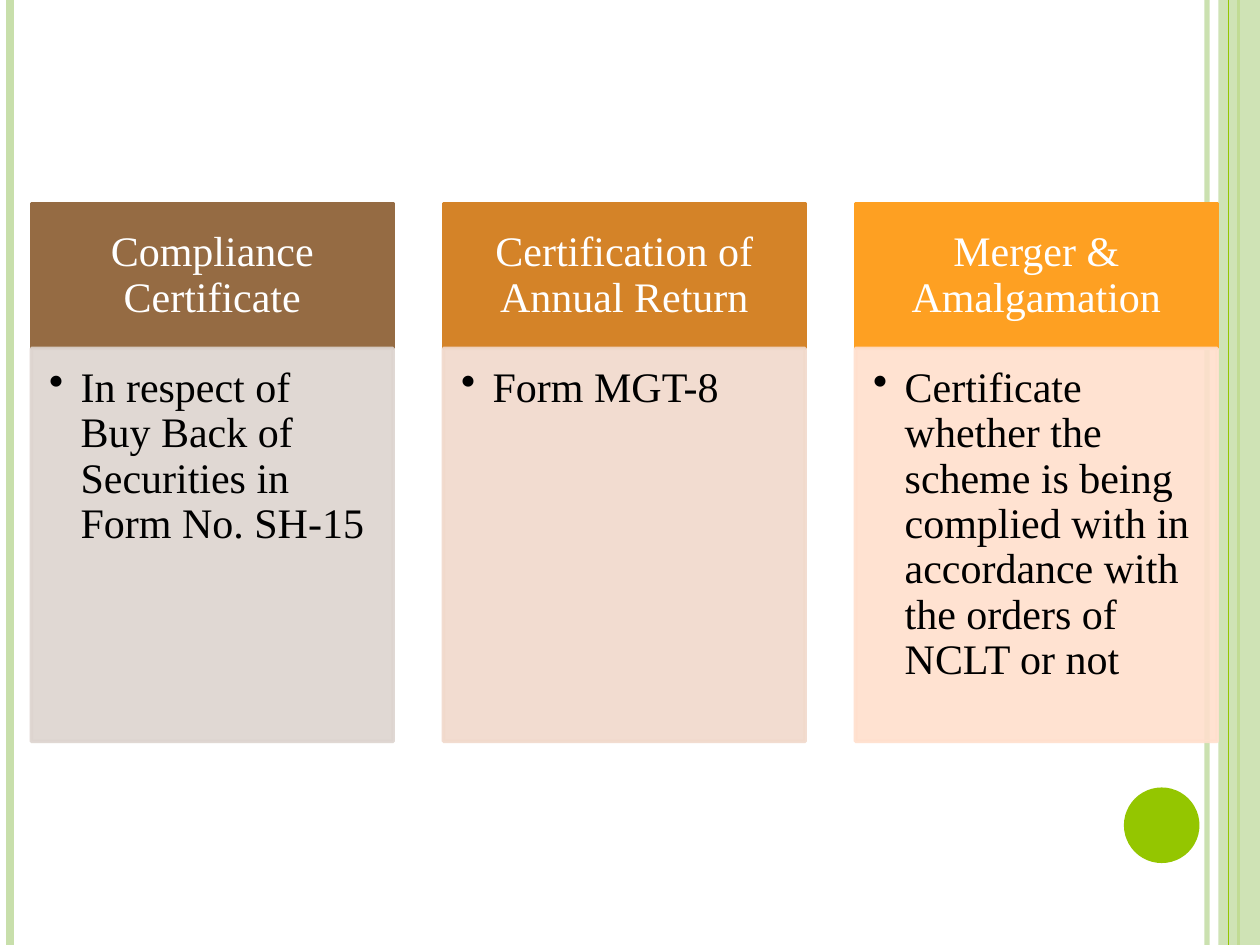
import dataclasses

import pptx
import pptx.dml.color
import pptx.enum.shapes
import pptx.enum.text
import pptx.oxml
import pptx.oxml.ns
import pptx.util

SHAPE = pptx.enum.shapes.MSO_SHAPE
ALIGN = pptx.enum.text.PP_ALIGN
ANCHOR = pptx.enum.text.MSO_ANCHOR


@dataclasses.dataclass(frozen=True)
class Theme:
    font: str = "Times New Roman"
    text_size: int = 24
    border: float = 2
    pale: str = "C8DFAB"
    green: str = "94C600"
    heading_text: str = "FFFFFF"
    body_text: str = "000000"


def apply(target, values):
    for name, value in values.items():
        setattr(target, name, value)


def add_xml(parent, tag, **attributes):
    child = pptx.oxml.parse_xml(f"<{tag} {pptx.oxml.ns.nsdecls('a')}/>")
    for name, value in attributes.items():
        child.set(name, str(value))
    parent.append(child)


class Page:
    COLUMNS, ROWS = 100, 75

    def __init__(self, deck, theme):
        self.theme = theme
        self.column = deck.slide_width / self.COLUMNS
        self.row = deck.slide_height / self.ROWS
        self.slide = deck.slides.add_slide(deck.slide_layouts[6])

    def across(self, columns):
        return pptx.util.Emu(round(columns * self.column))

    def down(self, rows):
        return pptx.util.Emu(round(rows * self.row))

    def paint(self, fill, color, opacity):
        fill.solid()
        fill.fore_color.rgb = pptx.dml.color.RGBColor.from_string(color)
        if opacity < 100:
            solid = fill._xPr.find(pptx.oxml.ns.qn("a:solidFill"))
            add_xml(solid[0], "a:alpha", val=opacity * 1000)

    def rule(self, column, color, width, opacity=100):
        x = self.across(column)
        line = self.slide.shapes.add_connector(
            pptx.enum.shapes.MSO_CONNECTOR.STRAIGHT, x, 0, x, self.down(self.ROWS))
        self.paint(line.line.fill, color, opacity)
        line.line.width = pptx.util.Pt(width)
        add_xml(line._element.spPr, "a:effectLst")

    def block(self, kind, box, color, opacity=100, border=0):
        left, top, width, height = box
        block = self.slide.shapes.add_shape(
            kind, self.across(left), self.down(top), self.across(width), self.down(height))
        block.shadow.inherit = False
        self.paint(block.fill, color, opacity)
        if border:
            self.paint(block.line.fill, color, opacity)
            block.line.width = pptx.util.Pt(border)
        else:
            block.line.fill.background()
        return block

    def label(self, block, text, color, align, anchor, insets, bullet=False):
        left, top, right, bottom = insets
        frame = block.text_frame
        apply(frame, {
            "word_wrap": True, "vertical_anchor": anchor, "text": text,
            "margin_left": self.across(left), "margin_right": self.across(right),
            "margin_top": self.down(top), "margin_bottom": self.down(bottom),
        })
        paragraph = frame.paragraphs[0]
        apply(paragraph, {"alignment": align, "line_spacing": 0.9})
        font = paragraph.runs[0].font
        apply(font, {"name": self.theme.font, "size": pptx.util.Pt(self.theme.text_size)})
        font.color.rgb = pptx.dml.color.RGBColor.from_string(color)
        if bullet:
            indent = self.across(2.5)
            properties = paragraph._p.get_or_add_pPr()
            properties.set("marL", str(indent))
            properties.set("indent", str(-indent))
            add_xml(properties, "a:buChar", char="•")

    def card(self, left, heading, heading_fill, body, body_fill):
        top, width, heading_height, body_height = 16.15, 28.7, 11.5, 31.2
        heading_block = self.block(
            SHAPE.RECTANGLE, (left, top, width, heading_height), heading_fill,
            border=self.theme.border)
        self.label(heading_block, heading, self.theme.heading_text,
                   ALIGN.CENTER, ANCHOR.MIDDLE, (1.9, 1.1, 1.9, 1.1))
        body_block = self.block(
            SHAPE.RECTANGLE, (left, top + heading_height, width, body_height), body_fill,
            opacity=90, border=self.theme.border)
        self.label(body_block, body, self.theme.body_text,
                   ALIGN.LEFT, ANCHOR.TOP, (1.4, 1.4, 1.9, 2.1), bullet=True)


def main():
    deck = pptx.Presentation()
    apply(deck, {"slide_width": pptx.util.Inches(10), "slide_height": pptx.util.Inches(7.5)})
    theme = Theme()
    page = Page(deck, theme)

    page.rule(95.8, theme.pale, 3, opacity=93)
    page.rule(0.8, theme.pale, 4.5)
    page.rule(98.3, theme.green, 1.5)
    page.block(SHAPE.RECTANGLE, (96.7, 0, 3.3, page.ROWS), theme.pale, opacity=87)
    page.rule(97.5, theme.green, 0.75)
    page.block(SHAPE.OVAL, (89.2, 62.5, 6, 6), theme.green)

    certificates = [
        ("Compliance Certificate", "956B43",
         "In respect of Buy Back of Securities in Form No. SH-15", "DDD4CF"),
        ("Certification of Annual Return", "D48328", "Form MGT-8", "F1D9CB"),
        ("Merger & Amalgamation", "FEA022",
         "Certificate whether the scheme is being complied with in accordance with "
         "the orders of NCLT or not", "FFDFCD"),
    ]
    first_column, pitch = 2.5, 32.7
    for index, certificate in enumerate(certificates):
        page.card(first_column + index * pitch, *certificate)

    deck.save("out.pptx")


if __name__ == "__main__":
    main()
